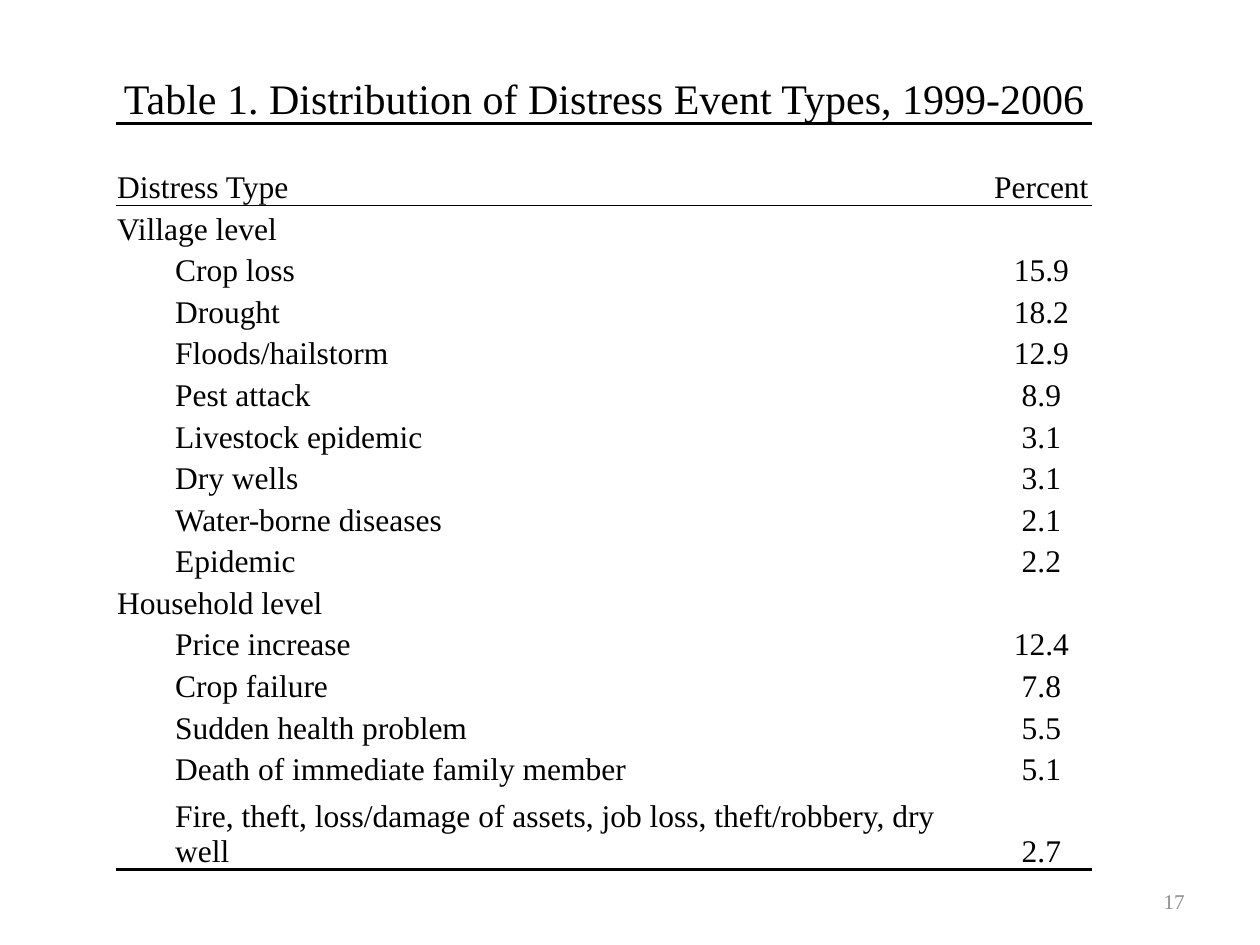
from lxml.etree import SubElement
from pptx import Presentation
from pptx.dml.color import RGBColor
from pptx.enum.text import MSO_ANCHOR, PP_ALIGN
from pptx.oxml import parse_xml
from pptx.oxml.ns import nsdecls, qn
from pptx.util import Inches, Pt

FONT = "Times New Roman"
BLACK, WHITE, GREY = "000000", "FFFFFF", "8C8C8C"
NO_STYLE = "{2D5ABB26-0587-4C30-8999-92F81FD0307C}"

TITLE = "Table 1. Distribution of Distress Event Types, 1999-2006"
HEADINGS = ("Distress Type", "Percent")
GROUPS = {
    "Village level": [
        ("Crop loss", "15.9"),
        ("Drought", "18.2"),
        ("Floods/hailstorm", "12.9"),
        ("Pest attack", "8.9"),
        ("Livestock epidemic", "3.1"),
        ("Dry wells", "3.1"),
        ("Water-borne diseases", "2.1"),
        ("Epidemic", "2.2"),
    ],
    "Household level": [
        ("Price increase", "12.4"),
        ("Crop failure", "7.8"),
        ("Sudden health problem", "5.5"),
        ("Death of immediate family member", "5.1"),
        ("Fire, theft, loss/damage of assets, job loss, theft/robbery, dry well", "2.7"),
    ],
}
COLUMN_WIDTHS = (6.94, 0.81)
TOP_HEIGHT, ROW_HEIGHT, TALL_HEIGHT, BOTTOM_HEIGHT = 0.24, 0.33, 0.65, 0.26
MARGIN, INDENT = 0.01, 0.47


def color(value):
    return RGBColor.from_string(value)


def format_paragraph(paragraph, size, value, alignment):
    paragraph.alignment = alignment
    paragraph.font.name = FONT
    paragraph.font.size = Pt(size)
    paragraph.font.color.rgb = color(value)


def fill_cell(cell, text="", size=18, alignment=PP_ALIGN.LEFT, left=MARGIN):
    cell.fill.solid()
    cell.fill.fore_color.rgb = color(WHITE)
    cell.vertical_anchor = MSO_ANCHOR.BOTTOM
    cell.margin_left = Inches(left)
    cell.margin_right = cell.margin_top = Inches(MARGIN)
    cell.margin_bottom = 0
    cell.text = text
    paragraph = cell.text_frame.paragraphs[0]
    format_paragraph(paragraph, size, BLACK, alignment)
    if not text:
        # An empty paragraph takes its height from its end mark
        SubElement(paragraph._p, qn("a:endParaRPr"), sz="1000")


def set_borders(cell, top, bottom):
    """Give the cell rules of these widths in points; 0 means no rule."""
    properties = cell._tc.get_or_add_tcPr()
    for position, (side, width) in enumerate((("lnT", top), ("lnB", bottom))):
        paint = (
            f'<a:solidFill><a:srgbClr val="{BLACK}"/></a:solidFill>'
            if width else "<a:noFill/>"
        )
        line = f'<a:{side} {nsdecls("a")} w="{Pt(width)}">{paint}</a:{side}>'
        properties.insert(position, parse_xml(line))


def remove_table_style(table):
    table.first_row = table.horz_banding = False
    properties = table._tbl.tblPr
    style = properties.find(qn("a:tableStyleId"))
    if style is None:
        style = SubElement(properties, qn("a:tableStyleId"))
    style.text = NO_STYLE


def add_distress_table(slide, left, top):
    rows = [("", "", MARGIN), (TITLE, "", MARGIN), (*HEADINGS, MARGIN)]
    for group, events in GROUPS.items():
        rows.append((group, "", MARGIN))
        rows += [(event, percent, INDENT) for event, percent in events]
    rows.append(("", "", MARGIN))

    last = len(rows) - 1
    heights = [ROW_HEIGHT] * len(rows)
    heights[0], heights[last] = TOP_HEIGHT, BOTTOM_HEIGHT
    heights[2] = heights[last - 1] = TALL_HEIGHT
    rules_below = {1: 2, 2: 0.5, last - 1: 2}

    table = slide.shapes.add_table(
        len(rows), 2, Inches(left), Inches(top),
        Inches(sum(COLUMN_WIDTHS)), Inches(sum(heights)),
    ).table
    remove_table_style(table)
    for column, width in zip(table.columns, COLUMN_WIDTHS):
        column.width = Inches(width)

    for index, (label, percent, indent) in enumerate(rows):
        table.rows[index].height = Inches(heights[index])
        fill_cell(table.cell(index, 0), label, left=indent)
        fill_cell(table.cell(index, 1), percent, alignment=PP_ALIGN.CENTER)
        for cell in table.rows[index].cells:
            set_borders(
                cell, rules_below.get(index - 1, 0), rules_below.get(index, 0)
            )

    title = table.cell(1, 0).text_frame.paragraphs[0]
    format_paragraph(title, 24, BLACK, PP_ALIGN.CENTER)
    for row in (0, 1):
        table.cell(row, 0).merge(table.cell(row, 1))


def add_slide_number(slide, left, top, width, height):
    box = slide.shapes.add_textbox(
        Inches(left), Inches(top), Inches(width), Inches(height)
    )
    frame = box.text_frame
    frame.word_wrap = True
    frame.vertical_anchor = MSO_ANCHOR.MIDDLE
    frame.text = "17"
    format_paragraph(frame.paragraphs[0], 12, GREY, PP_ALIGN.RIGHT)


def main():
    presentation = Presentation()
    presentation.slide_width = Inches(10)
    presentation.slide_height = Inches(7.5)
    slide = presentation.slides.add_slide(presentation.slide_layouts[6])
    add_slide_number(slide, 7.17, 6.95, 2.33, 0.4)
    add_distress_table(slide, 0.92, 0.33)
    presentation.save("out.pptx")


if __name__ == "__main__":
    main()
